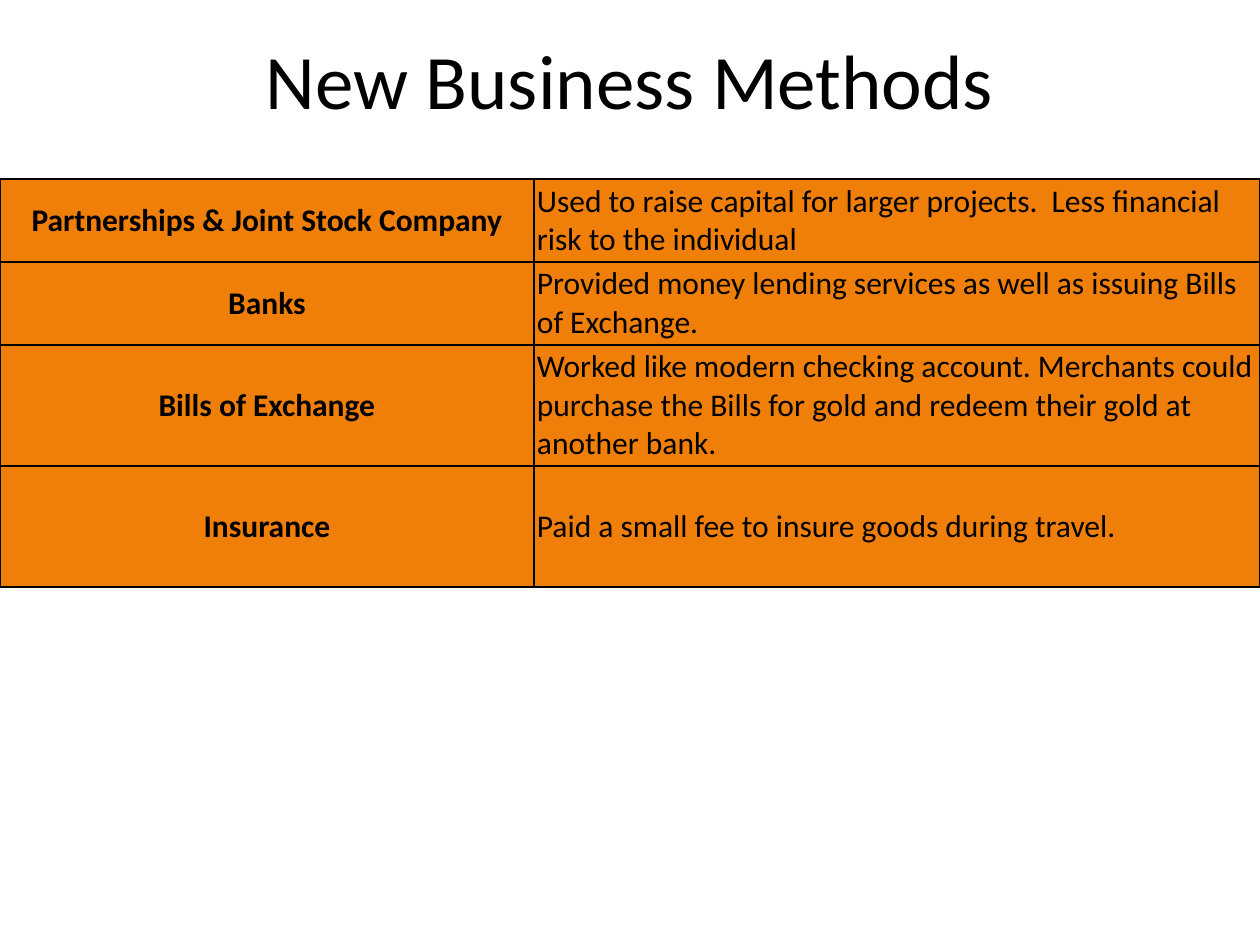
from lxml import etree
from pptx import Presentation
from pptx.dml.color import RGBColor
from pptx.enum.text import MSO_ANCHOR, PP_ALIGN
from pptx.oxml.ns import qn
from pptx.util import Pt

PX = 914400 // 126
BLACK = RGBColor(0x00, 0x00, 0x00)
ORANGE = RGBColor(0xF0, 0x7F, 0x09)
MIDDLE = MSO_ANCHOR.MIDDLE
CENTER, LEFT = PP_ALIGN.CENTER, PP_ALIGN.LEFT
FACE = "Calibri"
INSET = 3
COLS = (534, 726)
METHODS = (
    (82, "Partnerships & Joint Stock Company",
     "Used to raise capital for larger projects.  Less financial risk to the individual"),
    (82, "Banks",
     "Provided money lending services as well as issuing Bills of Exchange."),
    (121, "Bills of Exchange",
     "Worked like modern checking account. Merchants could purchase the Bills "
     "for gold and redeem their gold at another bank."),
    (121, "Insurance", "Paid a small fee to insure goods during travel. "),
)


def px(n):
    return n * PX


def style(para, align, size, bold):
    para.alignment = align
    for name, value in {"name": FACE, "size": Pt(size), "bold": bold}.items():
        setattr(para.font, name, value)
    para.font.color.rgb = BLACK


def add_title(slide, box, text):
    title = slide.shapes.title
    for name, value in zip(("left", "top", "width", "height"), box):
        setattr(title, name, px(value))
    title.text_frame.text = text
    title.text_frame.vertical_anchor = MIDDLE
    style(title.text_frame.paragraphs[0], CENTER, 44, False)


def add_edges(cell):
    props = cell._tc.get_or_add_tcPr()
    for side in ("lnL", "lnR", "lnT", "lnB"):
        line = etree.SubElement(props, qn(f"a:{side}"), w=str(Pt(1)))
        fill = etree.SubElement(line, qn("a:solidFill"))
        etree.SubElement(fill, qn("a:srgbClr"), val=str(BLACK))


def fill_cell(cell, text, align, bold):
    cell.text = text
    for side in ("left", "right", "top", "bottom"):
        setattr(cell, f"margin_{side}", px(INSET))
    cell.vertical_anchor = MIDDLE
    style(cell.text_frame.paragraphs[0], align, 18, bold)
    add_edges(cell)
    cell.fill.solid()
    cell.fill.fore_color.rgb = ORANGE


def add_methods(slide, left, top):
    height = sum(row[0] for row in METHODS)
    table = slide.shapes.add_table(
        len(METHODS), len(COLS), px(left), px(top), px(sum(COLS)), px(height)
    ).table
    table.first_row = table.horz_banding = False
    for col, width in zip(table.columns, COLS):
        col.width = px(width)
    for row, (height, method, usage) in zip(table.rows, METHODS):
        row.height = px(height)
        fill_cell(row.cells[0], method, CENTER, True)
        fill_cell(row.cells[1], usage, LEFT, False)


def main():
    deck = Presentation()
    deck.slide_width, deck.slide_height = px(1260), px(945)
    slide = deck.slides.add_slide(deck.slide_layouts[5])
    add_title(slide, (63, 0, 1134, 158), "New Business Methods")
    add_methods(slide, 0, 179)
    deck.save("out.pptx")


if __name__ == "__main__":
    main()
